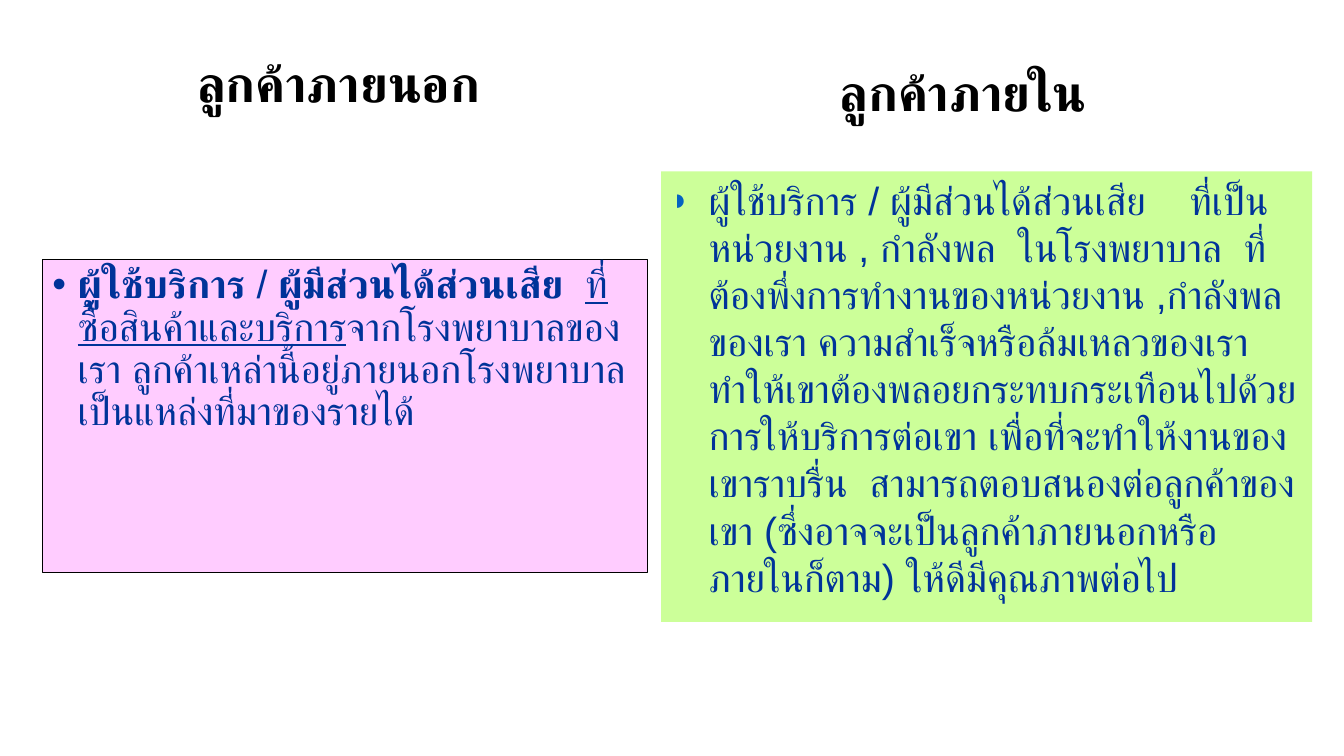
"""Build a slide that sets external customers beside internal customers."""
import dataclasses
import typing

import lxml.etree
import pptx
import pptx.dml.color
import pptx.enum.shapes
import pptx.enum.text
import pptx.oxml.ns
import pptx.util

Cm = pptx.util.Cm
Pt = pptx.util.Pt
Align = pptx.enum.text.PP_ALIGN
Anchor = pptx.enum.text.MSO_ANCHOR

FONT = "Arial"
COLORS = {
    "heading": "000000",
    "body": "003399",
    "border": "000000",
    "external": "FFCCFF",
    "internal": "CCFF99",
    "marker": "0563C1",
}
HEADING_FONT = {"size": Pt(36), "bold": True}
BODY_FONT = {"size": Pt(28), "bold": False}


class Box(typing.NamedTuple):
    left: float
    top: float
    width: float
    height: float


class Phrase(typing.NamedTuple):
    text: str
    emphasis: dict[str, bool] = {}


@dataclasses.dataclass(frozen=True)
class Heading:
    box: Box
    text: str
    anchor: Anchor
    line_spacing: float


@dataclasses.dataclass(frozen=True)
class Panel:
    box: Box
    fill: str
    phrases: tuple[Phrase, ...]
    bullet: str
    indent: float
    line_spacing: float
    border: str | None = None
    bullet_color: str | None = None
    bullet_percent: int = 100


HEADINGS = (
    Heading(Box(3.86, 1.37, 9.35, 2.29), "ลูกค้าภายนอก", Anchor.TOP, 0.9),
    Heading(Box(19.08, 1.12, 10.39, 2.39), "ลูกค้าภายใน", Anchor.MIDDLE, 1.0),
)
PANELS = (
    Panel(
        Box(1.07, 6.55, 15.24, 7.87),
        "external",
        (
            Phrase("ผู้ใช้บริการ", {"bold": True}),
            Phrase(" / "),
            Phrase("ผู้มีส่วนได้ส่วนเสีย  ", {"bold": True}),
            Phrase("ที่ซื้อสินค้าและบริการ", {"underline": True}),
            Phrase(
                "จากโรงพยาบาลของเรา ลูกค้าเหล่านี้อยู่ภายนอกโรงพยาบาล  "
                "เป็นแหล่งที่มาของรายได้"
            ),
        ),
        bullet="•",
        indent=0.64,
        line_spacing=0.9,
        border="border",
    ),
    Panel(
        Box(16.66, 4.32, 16.41, 11.35),
        "internal",
        (
            Phrase(
                "ผู้ใช้บริการ / ผู้มีส่วนได้ส่วนเสีย    ที่เป็นหน่วยงาน , กำลังพล  "
                "ในโรงพยาบาล  ที่ต้องพึ่งการทำงานของหน่วยงาน ,กำลังพลของเรา "
                "ความสำเร็จหรือล้มเหลวของเรา "
                "ทำให้เขาต้องพลอยกระทบกระเทือนไปด้วย การให้บริการต่อเขา "
                "เพื่อที่จะทำให้งานของเขาราบรื่น  สามารถตอบสนองต่อลูกค้าของเขา "
                "(ซึ่งอาจจะเป็นลูกค้าภายนอกหรือภายในก็ตาม) ให้ดีมีคุณภาพต่อไป"
            ),
        ),
        bullet="◗",
        indent=0.95,
        line_spacing=1.0,
        bullet_color="marker",
        bullet_percent=80,
    ),
)


def rgb(name: str) -> pptx.dml.color.RGBColor:
    return pptx.dml.color.RGBColor.from_string(COLORS[name])


def add_element(parent, tag: str, **attributes: str):
    return lxml.etree.SubElement(parent, pptx.oxml.ns.qn(tag), attributes)


def apply_format(target, values: dict[str, typing.Any]) -> None:
    for name, value in values.items():
        setattr(target, name, value)


def add_phrase(paragraph, text: str, color: str, values: dict[str, typing.Any]) -> None:
    run = paragraph.add_run()
    run.text = text
    apply_format(run.font, {"name": FONT, **values})
    run.font.color.rgb = rgb(color)
    add_element(run._r.get_or_add_rPr(), "a:cs", typeface=FONT)


def add_bullet(paragraph, panel: Panel) -> None:
    properties = paragraph._p.get_or_add_pPr()
    indent = Cm(panel.indent)
    properties.set("marL", str(indent))
    properties.set("indent", str(-indent))
    if panel.bullet_color:
        color = add_element(properties, "a:buClr")
        add_element(color, "a:srgbClr", val=COLORS[panel.bullet_color])
    add_element(properties, "a:buSzPct", val=str(panel.bullet_percent * 1000))
    add_element(properties, "a:buFont", typeface=FONT)
    add_element(properties, "a:buChar", char=panel.bullet)


def draw_heading(slide, heading: Heading) -> None:
    frame = slide.shapes.add_textbox(*map(Cm, heading.box)).text_frame
    apply_format(frame, {"word_wrap": True, "vertical_anchor": heading.anchor})
    paragraph = frame.paragraphs[0]
    apply_format(
        paragraph,
        {"alignment": Align.CENTER, "line_spacing": heading.line_spacing},
    )
    add_phrase(paragraph, heading.text, "heading", HEADING_FONT)


def draw_panel(slide, panel: Panel) -> None:
    rectangle = pptx.enum.shapes.MSO_SHAPE.RECTANGLE
    area = slide.shapes.add_shape(rectangle, *map(Cm, panel.box))
    area.shadow.inherit = False
    area.fill.solid()
    area.fill.fore_color.rgb = rgb(panel.fill)
    if panel.border:
        area.line.color.rgb = rgb(panel.border)
        area.line.width = Pt(0.75)
    else:
        area.line.fill.background()
    frame = area.text_frame
    apply_format(frame, {"word_wrap": True, "vertical_anchor": Anchor.TOP})
    paragraph = frame.paragraphs[0]
    add_bullet(paragraph, panel)
    apply_format(
        paragraph, {"alignment": Align.LEFT, "line_spacing": panel.line_spacing}
    )
    for phrase in panel.phrases:
        add_phrase(paragraph, phrase.text, "body", BODY_FONT | phrase.emphasis)


def main() -> None:
    presentation = pptx.Presentation()
    apply_format(
        presentation, {"slide_width": Cm(33.87), "slide_height": Cm(19.05)}
    )
    slide = presentation.slides.add_slide(presentation.slide_layouts[6])
    for heading, panel in zip(HEADINGS, PANELS):
        draw_heading(slide, heading)
        draw_panel(slide, panel)
    presentation.save("out.pptx")


if __name__ == "__main__":
    main()
